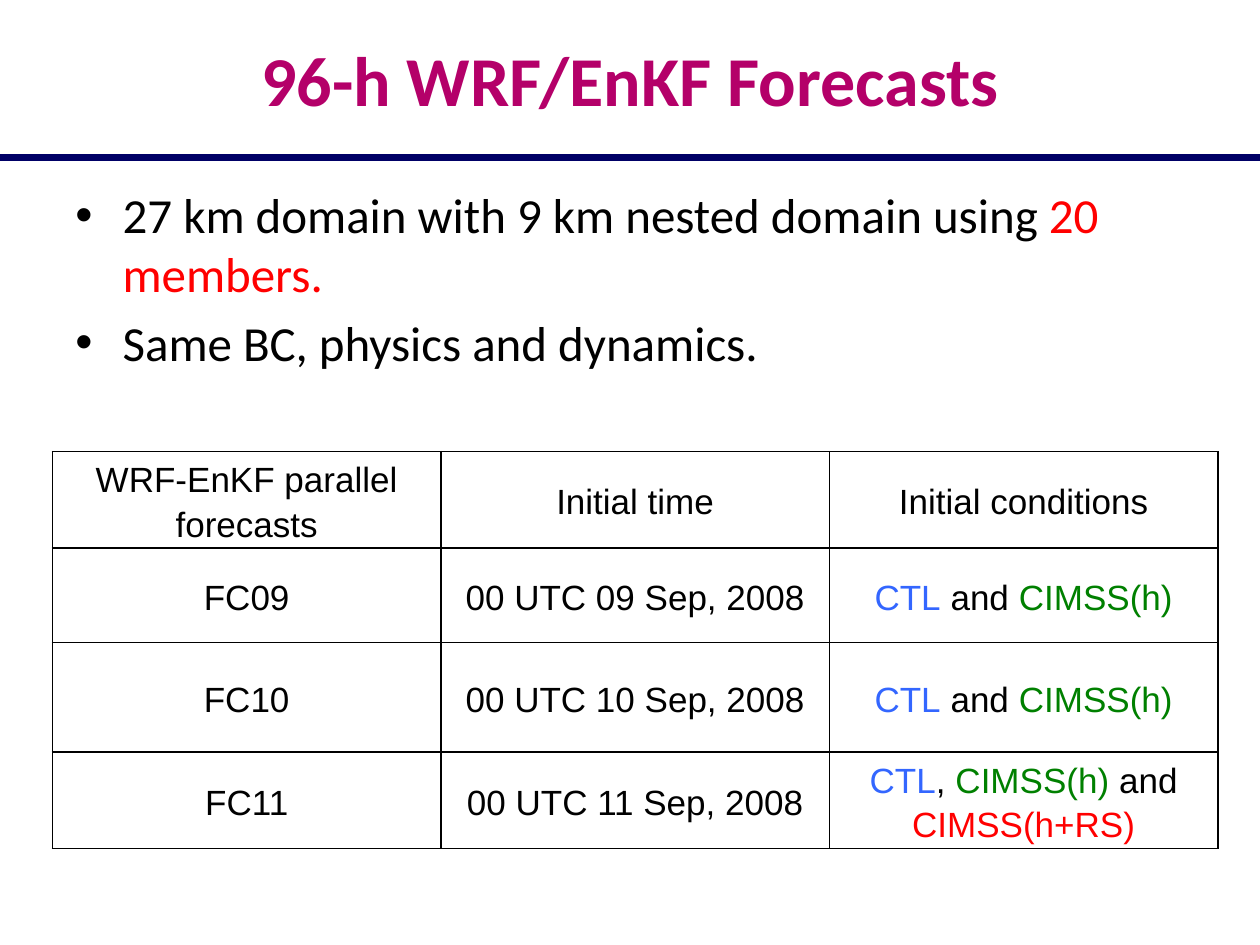
"""Build a slide on ensemble forecasts with a bulleted summary and a table."""

from dataclasses import dataclass

from lxml.etree import SubElement
from pptx import Presentation
from pptx.dml.color import RGBColor
from pptx.enum.shapes import MSO_CONNECTOR
from pptx.enum.text import MSO_ANCHOR, PP_ALIGN
from pptx.oxml import parse_xml
from pptx.oxml.ns import nsdecls, qn
from pptx.util import Pt

COLOURS = {
    "black": "000000",
    "white": "FFFFFF",
    "title": "B40069",
    "rule": "000066",
    "red": "FF0000",
    "blue": "3366FF",
    "green": "008000",
}


@dataclass(frozen=True)
class Run:
    text: str
    colour: str = "black"


@dataclass(frozen=True)
class Forecast:
    name: str
    day: str
    height: float
    conditions: tuple[Run, ...]


CONTROL = Run("CTL", "blue")
HUMIDITY = Run("CIMSS(h)", "green")
BOTH = (CONTROL, Run(" and "), HUMIDITY)
FORECASTS = (
    Forecast("FC09", "09", 54, BOTH),
    Forecast("FC10", "10", 62.5, BOTH),
    Forecast("FC11", "11", 45, (CONTROL, Run(", "), HUMIDITY, Run(" and "),
                                Run("CIMSS(h+RS)", "red"))),
)
HEADINGS = ("WRF-EnKF parallel forecasts", "Initial time", "Initial conditions")
HEADING_HEIGHT = 39
COLUMN_WIDTH = 222
BULLETS = (
    (Run("27 km domain with 9 km nested domain using "), Run("20 members.", "red")),
    (Run("Same BC, physics and dynamics."),),
)


def write_text(paragraph, runs: tuple[Run, ...], *, size: float, font: str,
               bold: bool = False, align=PP_ALIGN.LEFT) -> None:
    """Write coloured runs into a paragraph."""
    paragraph.alignment = align
    for item in runs:
        run = paragraph.add_run()
        run.text = item.text
        run.font.size = Pt(size)
        run.font.name = font
        run.font.bold = bold
        run.font.color.rgb = RGBColor.from_string(COLOURS[item.colour])


def add_text_frame(slide, left: float, top: float, width: float, height: float,
                   anchor):
    """Add a wrapping text box and return its text frame."""
    shape = slide.shapes.add_textbox(Pt(left), Pt(top), Pt(width), Pt(height))
    shape.text_frame.word_wrap = True
    shape.text_frame.vertical_anchor = anchor
    return shape.text_frame


def add_bullet(paragraph) -> None:
    """Give a paragraph a hanging bullet."""
    properties = paragraph._p.get_or_add_pPr()
    properties.set("marL", str(Pt(27)))
    properties.set("indent", str(-Pt(27)))
    SubElement(properties, qn("a:buFont"), typeface="Arial")
    SubElement(properties, qn("a:buChar"), char="•")


def add_borders(cell) -> None:
    """Draw a thin line on each side of a cell."""
    properties = cell._tc.get_or_add_tcPr()
    for index, side in enumerate("LRTB"):
        properties.insert(index, parse_xml(
            f'<a:ln{side} {nsdecls("a")} w="{Pt(1)}"><a:solidFill>'
            f'<a:srgbClr val="{COLOURS["black"]}"/></a:solidFill></a:ln{side}>'))


def fill_cell(cell, runs: tuple[Run, ...]) -> None:
    """Format a table cell and write its text."""
    cell.fill.solid()
    cell.fill.fore_color.rgb = RGBColor.from_string(COLOURS["white"])
    cell.vertical_anchor = MSO_ANCHOR.MIDDLE
    cell.margin_left = cell.margin_right = Pt(5)
    cell.margin_top = cell.margin_bottom = Pt(0)
    paragraph = cell.text_frame.paragraphs[0]
    paragraph.line_spacing = 1.15
    paragraph.space_after = Pt(10)
    write_text(paragraph, runs, size=20, font="Arial", align=PP_ALIGN.CENTER)
    add_borders(cell)


def add_forecast_table(slide) -> None:
    """Add the table of forecasts."""
    rows = [tuple((Run(heading),) for heading in HEADINGS)]
    rows += [((Run(forecast.name),), (Run(f"00 UTC {forecast.day} Sep, 2008"),),
              forecast.conditions) for forecast in FORECASTS]
    heights = [HEADING_HEIGHT] + [forecast.height for forecast in FORECASTS]
    table = slide.shapes.add_table(
        len(rows), len(HEADINGS), Pt(30), Pt(258),
        Pt(COLUMN_WIDTH * len(HEADINGS)), Pt(sum(heights))).table
    table.first_row = False
    table.horz_banding = False
    for column in table.columns:
        column.width = Pt(COLUMN_WIDTH)
    for row, height, contents in zip(table.rows, heights, rows):
        row.height = Pt(height)
        for cell, runs in zip(row.cells, contents):
            fill_cell(cell, runs)


def add_rule(slide) -> None:
    """Add the line below the title."""
    rule = slide.shapes.add_connector(
        MSO_CONNECTOR.STRAIGHT, Pt(0), Pt(90), Pt(720), Pt(90))
    rule.line.color.rgb = RGBColor.from_string(COLOURS["rule"])
    rule.line.width = Pt(3.5)
    SubElement(rule._element.spPr, qn("a:effectLst"))


def main() -> None:
    """Build and save the presentation."""
    presentation = Presentation()
    presentation.slide_width, presentation.slide_height = Pt(720), Pt(540)
    slide = presentation.slides.add_slide(presentation.slide_layouts[6])

    title = add_text_frame(slide, 36, 0, 648, 90, MSO_ANCHOR.MIDDLE)
    write_text(title.paragraphs[0], (Run("96-h WRF/EnKF Forecasts", "title"),),
               size=40, font="Calibri", bold=True, align=PP_ALIGN.CENTER)

    body = add_text_frame(slide, 36, 102, 648, 132, MSO_ANCHOR.TOP)
    for index, runs in enumerate(BULLETS):
        paragraph = body.add_paragraph() if index else body.paragraphs[0]
        paragraph.space_before = Pt(5.6)
        add_bullet(paragraph)
        write_text(paragraph, runs, size=28, font="Calibri")

    add_forecast_table(slide)
    add_rule(slide)
    presentation.save("out.pptx")


if __name__ == "__main__":
    main()
